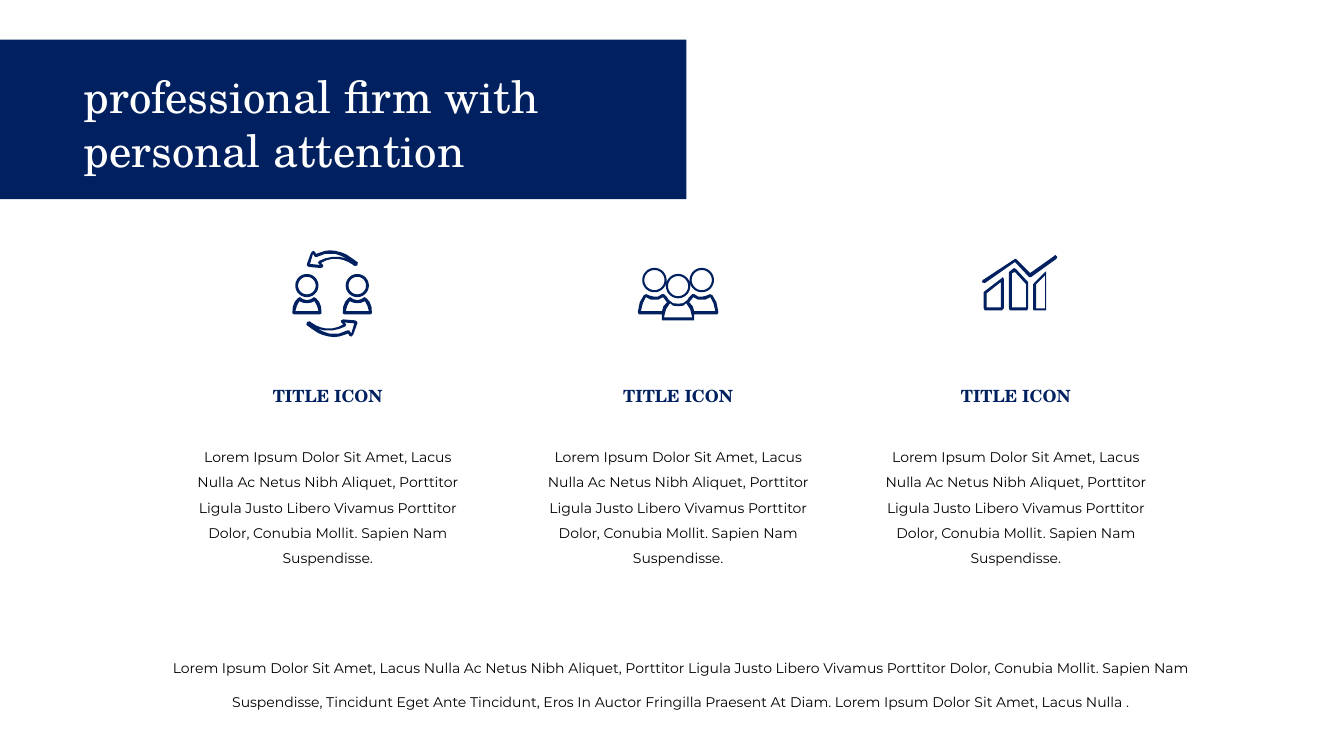
"""Build the slide with a banner title and three icon columns."""
import math

import pptx
import pptx.dml.color
import pptx.enum.shapes
import pptx.enum.text
import pptx.util

Cm = pptx.util.Cm
ALIGN = pptx.enum.text.PP_ALIGN
COLORS = {"navy": "002060", "white": "FFFFFF", "black": "000000"}
SERIF, SANS = "TeX Gyre Schola", "Montserrat"
ICON_STEPS = 100

TITLE = "professional firm with personal attention"
COLUMN_TITLE = "TITLE ICON"
COLUMN_TEXT = (
    "Lorem Ipsum Dolor Sit Amet, Lacus Nulla Ac Netus Nibh Aliquet, Porttitor Ligula Justo "
    "Libero Vivamus Porttitor Dolor, Conubia Mollit. Sapien Nam Suspendisse."
)
FOOTER = (
    "Lorem Ipsum Dolor Sit Amet, Lacus Nulla Ac Netus Nibh Aliquet, Porttitor Ligula Justo "
    "Libero Vivamus Porttitor Dolor, Conubia Mollit. Sapien Nam Suspendisse, Tincidunt Eget "
    "Ante Tincidunt, Eros In Auctor Fringilla Praesent At Diam. Lorem Ipsum Dolor Sit Amet, "
    "Lacus Nulla ."
)
COLUMN_CENTERS = [8.26, 17.09, 25.6]


def flip(points):
    return [(-x, y) for x, y in points]


def symmetric(half):
    return half + flip(half)[::-1]


def shift(points, dx):
    return [(x + dx, y) for x, y in points]


def ring(center_x, center_y, *radii):
    angles = [math.radians(step * 10) for step in range(36)]
    return [
        [(center_x + radius * math.cos(a), center_y + radius * math.sin(a)) for a in angles]
        for radius in radii
    ]


def exchange_icon():
    arrow = [
        [(11, 30.5), (6, 33), (0, 34.5), (-6, 34.5), (-11, 33.5), (-16, 31.5), (-21, 28.5),
         (-22, 27.5), (-25, 28), (-25.5, 31), (-20, 35), (-14, 39), (-9, 41), (-3, 42.5),
         (2, 43), (7, 42.5), (16, 39.5), (17, 41.5), (19, 42.5), (21, 40.5), (25, 29.5),
         (25, 28), (23, 26.5), (11, 25.5), (9, 26.5), (9, 28.5)],
        [(13, 32.5), (14, 30.5), (12, 28.5), (22, 29.5), (19, 39.5), (17, 36.5), (15, 36.5),
         (7, 39.5), (-3, 39.5), (-9, 37.5), (-15, 34.5), (-8, 36.5), (0, 36.5), (7, 35)],
    ]
    body = [
        symmetric([(0, 6.5), (4, 5.5), (7, 3.5), (9, 4.5), (12, 8), (14, 13), (14.5, 19.5),
                   (13, 20.5)]),
        symmetric([(0, 9.5), (4, 9), (7.5, 7.5), (10, 12), (11.5, 17.5)]),
    ]
    outlines = [arrow, [[(-x, -y) for x, y in contour] for contour in arrow]]
    for center in (-25, 25):
        outlines += [ring(center, -8, 11.5, 8.7), [shift(contour, center) for contour in body]]
    return outlines


def group_icon():
    bodies = symmetric([
        (0, 17.5), (5, 17), (9, 14), (11, 11), (14, 8), (16, 8), (20, 10.5), (24, 10.5),
        (28, 9.5), (31.5, 8), (34, 9), (38, 16), (40, 26), (39, 28), (16, 28), (16, 34)])
    front = symmetric([(0, 20), (5, 19.5), (8, 17), (12, 23), (14, 31)])
    side = [(15, 11), (20, 13.5), (27, 13.5), (32, 11), (35, 17), (37, 25), (16, 25),
            (14.5, 20), (11, 16)]
    heads = [contour for x, y in ((0, 0), (-23.5, -6), (23.5, -6))
             for contour in ring(x, y, 12.1, 10)]
    return [[bodies, front, side, flip(side)], heads]


def growth_icon():
    return [
        [[(-17, -4), (-34, 9), (-35, 10), (-35, 26), (-34, 28), (-17, 28), (-15, 26),
          (-15, -3), (-16, -5)],
         [(-18, 25), (-32, 25), (-32, 11), (-18, 0)]],
        [[(-5, -14), (-10, -10), (-10, 26), (-9, 28), (8, 28), (9, 26), (9, 0), (-3, -13)],
         [(7, 25), (-7, 25), (-7, -9), (-4, -10), (7, 2)]],
        [[(26, -10), (15, 1), (14, 2), (14, 27), (15, 28), (27, 28), (27, -11)],
         [(26, 26), (17, 26), (17, 2), (26, -7)]],
        [[(35, -26), (11, -9), (-3, -23), (-4, -23), (-36, -2), (-37, 0), (-34, 1), (-4, -20),
          (10, -5), (12, -5), (37, -23), (38, -25), (36, -27)]],
    ]


class SlideBuilder:
    """Holds the current slide and its style."""

    def __init__(self, slide):
        self.slide = slide

    def paint(self, shape, color):
        shape.shadow.inherit = False
        shape.fill.solid()
        shape.fill.fore_color.rgb = pptx.dml.color.RGBColor.from_string(COLORS[color])
        shape.line.fill.background()
        return shape

    def banner(self, left, top, width, height):
        rectangle = pptx.enum.shapes.MSO_SHAPE.RECTANGLE
        shape = self.slide.shapes.add_shape(
            rectangle, Cm(left), Cm(top), Cm(width), Cm(height))
        return self.paint(shape, "navy")

    def set_text(self, shape, text, font, size, color, align=ALIGN.CENTER, spacing=1.0,
                 bold=False):
        frame = shape.text_frame
        frame.text = text
        paragraph = frame.paragraphs[0]
        formats = [
            (frame, {"word_wrap": True,
                     "vertical_anchor": pptx.enum.text.MSO_ANCHOR.TOP,
                     "auto_size": pptx.enum.text.MSO_AUTO_SIZE.SHAPE_TO_FIT_TEXT}),
            (paragraph, {"alignment": align, "line_spacing": spacing}),
            (paragraph.runs[0].font, {"name": font, "size": pptx.util.Pt(size), "bold": bold}),
        ]
        for target, values in formats:
            for name, value in values.items():
                setattr(target, name, value)
        rgb = pptx.dml.color.RGBColor.from_string(COLORS[color])
        paragraph.runs[0].font.color.rgb = rgb

    def title(self, left, top, width, height, text, **style):
        shape = self.slide.shapes.title
        box = {"left": left, "top": top, "width": width, "height": height}
        for name, value in box.items():
            setattr(shape, name, Cm(value))
        self.set_text(shape, text, **style)
        return shape

    def text(self, left, top, width, height, text, **style):
        shape = self.slide.shapes.add_textbox(Cm(left), Cm(top), Cm(width), Cm(height))
        self.set_text(shape, text, **style)

    def icon(self, center_x, center_y, outlines):
        scale = Cm(2.54) / 100 / ICON_STEPS
        for contours in outlines:
            builder = None
            for contour in contours:
                points = [(x * ICON_STEPS, y * ICON_STEPS) for x, y in contour]
                if builder is None:
                    builder = self.slide.shapes.build_freeform(*points[0], scale=scale)
                else:
                    builder.move_to(*points[0])
                builder.add_line_segments(points[1:], close=True)
            self.paint(builder.convert_to_shape(Cm(center_x), Cm(center_y)), "navy")


def main():
    presentation = pptx.Presentation()
    presentation.slide_width, presentation.slide_height = Cm(33.87), Cm(19.05)
    slide = presentation.slides.add_slide(presentation.slide_layouts[5])
    builder = SlideBuilder(slide)

    banner = builder.banner(0, 1, 17.3, 4.02)
    title = builder.title(1.85, 1.6, 14.8, 3, TITLE, font=SERIF, size=32, color="white",
                          align=ALIGN.LEFT)
    title.element.addprevious(banner.element)

    for center in COLUMN_CENTERS:
        builder.text(center - 2, 9.6, 4, 0.77, COLUMN_TITLE, font=SERIF, size=12,
                     color="navy", bold=True)
        builder.text(center - 3.84, 10.97, 7.68, 3.45, COLUMN_TEXT, font=SANS, size=10,
                     color="black", spacing=1.5)
    builder.text(3.48, 16.08, 27.33, 1.96, FOOTER, font=SANS, size=10, color="black",
                 spacing=2.0)

    builder.icon(8.37, 7.4, exchange_icon())
    builder.icon(17.09, 7.21, group_icon())
    builder.icon(25.68, 7.11, growth_icon())
    presentation.save("out.pptx")


if __name__ == "__main__":
    main()
